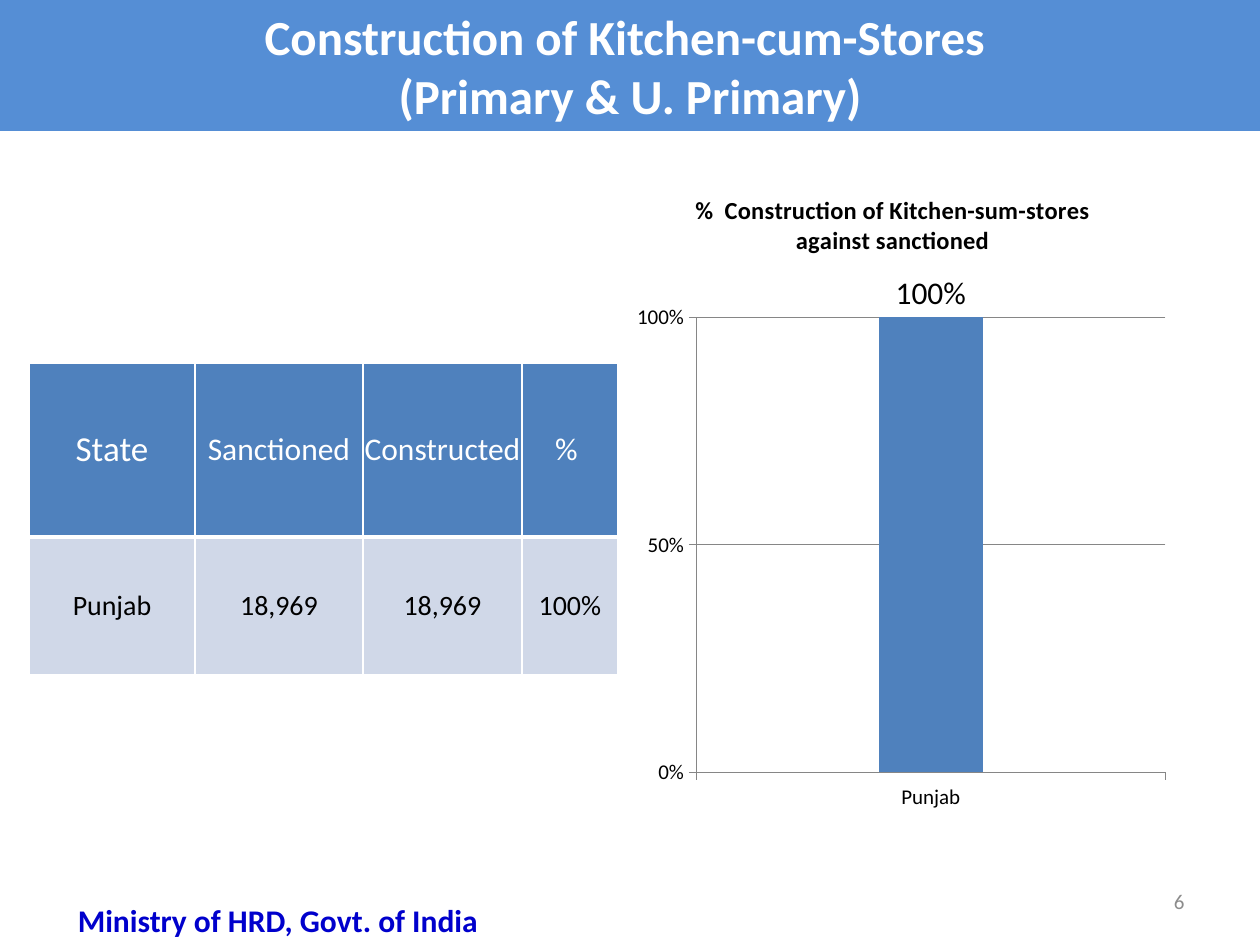
import pptx
import pptx.chart.data
import pptx.dml.color
import pptx.enum.chart
import pptx.enum.text
import pptx.oxml
import pptx.oxml.ns
import pptx.util

PX = 914400 / 126
FONT = "Calibri"
COLORS = {
    "banner": "558ED5",
    "blue": "4F81BD",
    "band": "D0D8E8",
    "white": "FFFFFF",
    "black": "000000",
    "grid": "868686",
    "number": "8C8C8C",
    "ministry": "0000CC",
}
ALIGN = pptx.enum.text.PP_ALIGN
ANCHOR = pptx.enum.text.MSO_ANCHOR


def px(*lengths):
    return [pptx.util.Emu(round(n * PX)) for n in lengths]


def rgb(name):
    return pptx.dml.color.RGBColor.from_string(COLORS[name])


def style_font(font, size, color, bold=False):
    font.name = FONT
    font.size = pptx.util.Pt(size)
    font.bold = bold
    font.color.rgb = rgb(color)


def set_text(tf, text, size, color, bold=False, align=ALIGN.CENTER):
    tf.text = text
    for p in tf.paragraphs:
        p.alignment = align
        for r in p.runs:
            style_font(r.font, size, color, bold)


def add_title(s, box, text):
    sp = s.shapes.title
    sp.left, sp.top, sp.width, sp.height = px(*box)
    sp.fill.solid()
    sp.fill.fore_color.rgb = rgb("banner")
    tf = sp.text_frame
    tf.auto_size = pptx.enum.text.MSO_AUTO_SIZE.NONE
    tf.vertical_anchor = ANCHOR.MIDDLE
    set_text(tf, text, 28, "white", bold=True)


def add_text(s, box, text, size, color, bold=False, align=ALIGN.CENTER,
             anchor=ANCHOR.TOP):
    tf = s.shapes.add_textbox(*px(*box)).text_frame
    tf.word_wrap = True
    tf.vertical_anchor = anchor
    set_text(tf, text, size, color, bold, align)


def set_borders(cell, bottom):
    tcPr = cell._tc.get_or_add_tcPr()
    widths = {"lnL": 1, "lnR": 1, "lnT": 1, "lnB": bottom}
    # Border lines come before the fill in the cell properties
    for i, (tag, width) in enumerate(widths.items()):
        tcPr.insert(i, pptx.oxml.parse_xml(
            f'<a:{tag} {pptx.oxml.ns.nsdecls("a")} w="{pptx.util.Pt(width)}">'
            f'<a:solidFill><a:srgbClr val="{COLORS["white"]}"/></a:solidFill>'
            f'</a:{tag}>'))


def add_table(s, left, top, widths, heights, rows):
    box = px(left, top, sum(widths), sum(heights))
    table = s.shapes.add_table(len(rows), len(widths), *box).table
    for col, width in zip(table.columns, px(*widths)):
        col.width = width
    for row, height in zip(table.rows, px(*heights)):
        row.height = height
    for i, row in enumerate(rows):
        fill, color, bottom = (("band", "black", 1) if i
                               else ("blue", "white", 3))
        for j, (text, size) in enumerate(row):
            cell = table.cell(i, j)
            cell.fill.solid()
            cell.fill.fore_color.rgb = rgb(fill)
            cell.margin_left = cell.margin_right = 0
            cell.margin_top = cell.margin_bottom = 0
            cell.vertical_anchor = ANCHOR.MIDDLE
            set_text(cell.text_frame, text, size, color)
            set_borders(cell, bottom)


def set_plot_layout(chart, x, y, w, h):
    area = chart._chartSpace.chart.plotArea
    for old in area.findall(pptx.oxml.ns.qn("c:layout")):
        area.remove(old)
    values = {"layoutTarget": "inner", "xMode": "edge", "yMode": "edge",
              "x": x, "y": y, "w": w, "h": h}
    parts = "".join(f'<c:{k} val="{v}"/>' for k, v in values.items())
    area.insert(0, pptx.oxml.parse_xml(
        f'<c:layout {pptx.oxml.ns.nsdecls("c")}>'
        f'<c:manualLayout>{parts}</c:manualLayout></c:layout>'))


def style_line(line):
    line.color.rgb = rgb("grid")
    line.width = pptx.util.Pt(0.75)


def add_column_chart(s, box, title, categories, values):
    data = pptx.chart.data.CategoryChartData()
    data.categories = categories
    data.add_series("Series 1", values)
    kind = pptx.enum.chart.XL_CHART_TYPE.COLUMN_CLUSTERED
    chart = s.shapes.add_chart(kind, *px(*box), data).chart
    style_font(chart.font, 18, "black")
    chart.has_legend = False
    chart.has_title = True
    set_text(chart.chart_title.text_frame, title, 14, "black", bold=True)
    chart.chart_title.include_in_layout = False

    # Axes
    for axis in (chart.category_axis, chart.value_axis):
        style_font(axis.tick_labels.font, 12, "black")
        axis.major_tick_mark = pptx.enum.chart.XL_TICK_MARK.OUTSIDE
        style_line(axis.format.line)
    axis = chart.value_axis
    axis.minimum_scale, axis.maximum_scale, axis.major_unit = 0, 1, 0.5
    axis.tick_labels.number_format = "0%"
    axis.tick_labels.number_format_is_linked = False
    style_line(axis.major_gridlines.format.line)

    # Columns and their labels
    plot = chart.plots[0]
    plot.gap_width = 349
    plot.vary_by_categories = False
    fill = plot.series[0].format.fill
    fill.solid()
    fill.fore_color.rgb = rgb("blue")
    plot.has_data_labels = True
    labels = plot.data_labels
    labels.show_value = True
    labels.number_format = "0%"
    labels.number_format_is_linked = False
    labels.position = pptx.enum.chart.XL_LABEL_POSITION.OUTSIDE_END
    style_font(labels.font, 18, "black")
    set_plot_layout(chart, 0.14, 0.22, 0.86, 0.67)


def main():
    prs = pptx.Presentation()
    prs.slide_width, prs.slide_height = px(1260, 945)
    s = prs.slides.add_slide(prs.slide_layouts[5])

    # Banner
    add_title(s, (0, 0, 1260, 131),
              "Construction of Kitchen-cum-Stores \n(Primary & U. Primary)")

    # Sanctioned and constructed stores
    add_table(s, 29, 363, (166, 168, 159, 96), (174, 138), [
        [("State", 20), ("Sanctioned", 18), ("Constructed", 18), ("% ", 18)],
        [("Punjab", 16), ("18,969", 16), ("18,969", 16), ("100%", 16)],
    ])

    # Share constructed
    add_column_chart(s, (620, 168, 546, 679),
                     "%  Construction of Kitchen-sum-stores against sanctioned",
                     ["Punjab"], [1])

    # Footer
    add_text(s, (903, 876, 294, 50), "6", 12, "number",
             align=ALIGN.RIGHT, anchor=ANCHOR.MIDDLE)
    add_text(s, (31, 895, 494, 50), "Ministry of HRD, Govt. of India", 18,
             "ministry", bold=True)

    prs.save("out.pptx")


if __name__ == "__main__":
    main()
